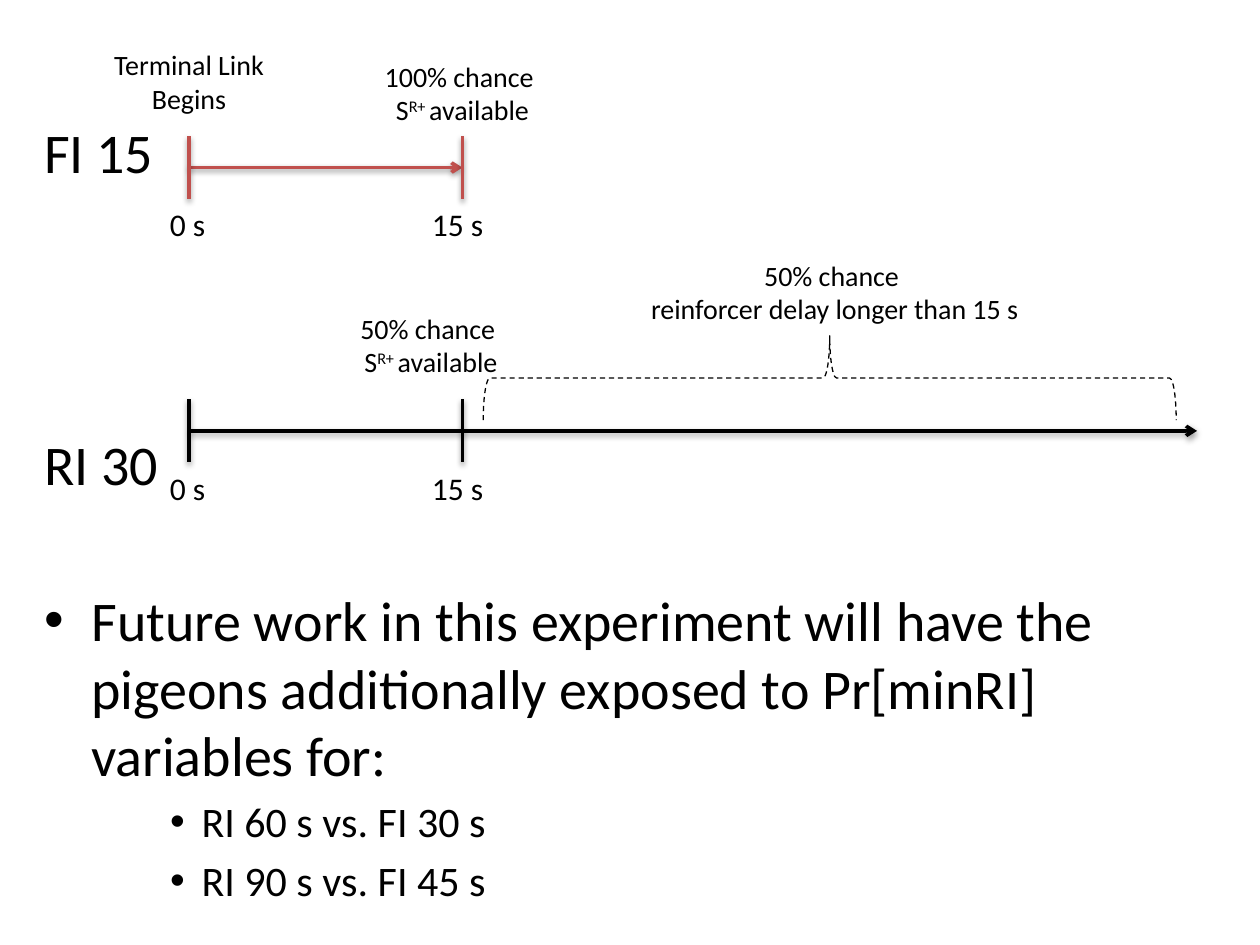
"""Build a slide comparing FI 15 and RI 30 reinforcement timelines."""
from dataclasses import dataclass

from lxml import etree
from pptx import Presentation
from pptx.dml.color import RGBColor
from pptx.enum import dml, shapes, text
from pptx.oxml import ns
from pptx.util import Inches, Pt


@dataclass(frozen=True)
class Theme:
    font: str = "Calibri"
    ink: RGBColor = RGBColor(0x00, 0x00, 0x00)
    red: RGBColor = RGBColor(0xC0, 0x50, 0x4D)
    body: Pt = Pt(32)
    item: Pt = Pt(24)
    time: Pt = Pt(18)
    note: Pt = Pt(16)


theme = Theme()
deck = Presentation()
deck.slide_width, deck.slide_height = Inches(10), Inches(7.5)
page = deck.slides.add_slide(deck.slide_layouts[1])
title = page.shapes.title
title.element.getparent().remove(title.element)


def add_line(start, end, color, arrow=False):
    line = page.shapes.add_connector(
        shapes.MSO_CONNECTOR.STRAIGHT, *map(Inches, start + end))
    line.line.color.rgb = color
    line.line.width = Pt(2)
    if arrow:
        etree.SubElement(line.line._get_or_add_ln(), ns.qn("a:tailEnd"), type="arrow")


def add_label(content, left, top, width, height, size, align, wrap=True):
    box = page.shapes.add_textbox(*map(Inches, (left, top, width, height)))
    frame = box.text_frame
    frame.word_wrap = wrap
    for index, row in enumerate(content.split("\n")):
        para = frame.add_paragraph() if index else frame.paragraphs[0]
        para.alignment = align
        para.font.name, para.font.size = theme.font, size
        para.font.color.rgb = theme.ink
        first, *rest = row.split("^")
        para.text = first
        for place, part in enumerate(rest):
            span = para.add_run()
            span.text = part
            if place % 2 == 0:
                span._r.get_or_add_rPr().set("baseline", "30000")


body = page.placeholders[1]
body.left, body.top, body.width, body.height = map(Inches, (0.25, 0.88, 9.5, 6.37))
body.text_frame.auto_size = text.MSO_AUTO_SIZE.NONE
entries = [
    ("FI 15", 0, theme.body, Pt(0), False),
    ("RI 30", 0, theme.body, Pt(140), False),
    ("Future work in this experiment will have the pigeons additionally "
     "exposed to Pr[minRI] variables for:", 0, theme.body, Pt(51), True),
    ("RI 60 s vs. FI 30 s", 2, theme.item, None, True),
    ("RI 90 s vs. FI 45 s", 2, theme.item, None, True),
]
for index, (words, level, size, gap, bullet) in enumerate(entries):
    para = body.text_frame.add_paragraph() if index else body.text_frame.paragraphs[0]
    para.text, para.level = words, level
    para.space_before = gap
    if not bullet:
        etree.SubElement(para._p.get_or_add_pPr(), ns.qn("a:buNone"))
    para.font.name, para.font.size = theme.font, size
    para.font.color.rgb = theme.ink

start_x, mark_x = 1.5, 3.67
for tick_top, end_x, color in ((1.08, mark_x, theme.red), (3.17, 9.5, theme.ink)):
    axis_y, tick_bottom = tick_top + 0.25, tick_top + 0.5
    add_line((start_x, axis_y), (end_x, axis_y), color, arrow=True)
    for x in (start_x, mark_x):
        add_line((x, tick_top), (x, tick_bottom), color)
    for words, left, width in (("0 s", 1.25, 0.49), ("15 s", 3.33, 0.61)):
        add_label(words, left, tick_bottom, width, 0.4, theme.time,
                  text.PP_ALIGN.LEFT, wrap=False)

for words, left, top, width in (
    ("Terminal Link\nBegins", 0.25, 0.33, 2.5),
    ("100% chance \vS^R+ ^available", 2.42, 0.42, 2.5),
    ("50% chance \vS^R+ ^available", 2.17, 2.42, 2.5),
    ("50% chance \vreinforcer delay longer than 15 s", 4.75, 2, 3.75),
):
    add_label(words, left, top, width, 0.64, theme.note, text.PP_ALIGN.CENTER)

brace = page.shapes.add_shape(
    shapes.MSO_SHAPE.LEFT_BRACE, *map(Inches, (6.25, 0.25, 0.67, 5.5)))
brace.rotation = 90
brace.adjustments[0] = 0.08
brace.shadow.inherit = False
brace.fill.background()
brace.line.color.rgb = theme.ink
brace.line.width = Pt(0.75)
brace.line.dash_style = dml.MSO_LINE.DASH

deck.save("out.pptx")
